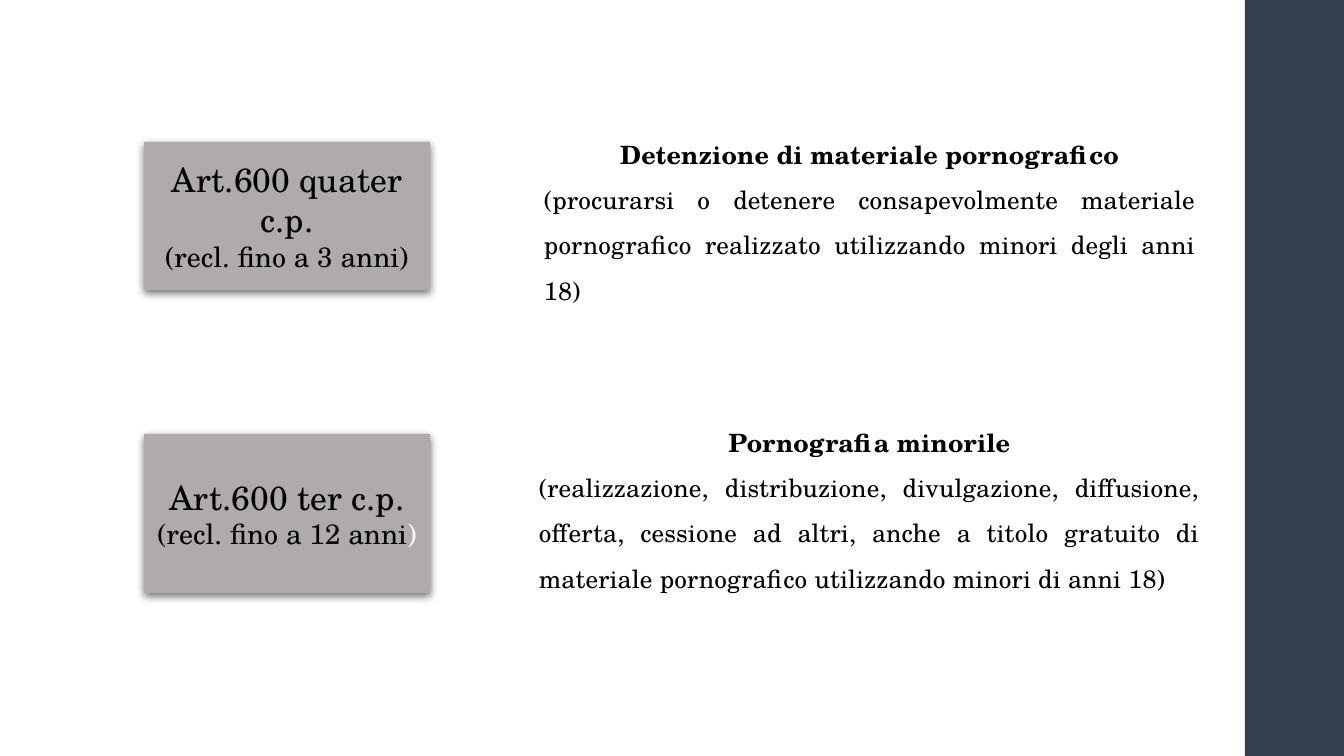
from lxml.etree import SubElement
from pptx import Presentation
from pptx.dml.color import RGBColor
from pptx.enum.shapes import MSO_SHAPE
from pptx.enum.text import MSO_ANCHOR, MSO_AUTO_SIZE, PP_ALIGN
from pptx.oxml.ns import qn
from pptx.util import Pt

EMU_PER_PX = 914400 / 100.8
FONT = "TeX Gyre Schola"
COLORS = {"sidebar": "333F50", "card": "AFABAB", "text": "000000",
          "light": "FFFFFF", "shadow": "000000"}

# Each article: card box, card lines, description box, heading, description
ARTICLES = [
    ((144, 142, 286, 148),
     "Art.600 quater c.p.", [("(recl. fino a 3 anni)", "text")],
     (534, 119, 672, 194),
     "Detenzione di materiale pornografico",
     "(procurarsi o detenere consapevolmente materiale pornografico "
     "realizzato utilizzando minori degli anni 18)"),
    ((144, 434, 286, 159),
     "Art.600 ter c.p.", [("(recl. fino a 12 anni", "text"), (")", "light")],
     (529, 407, 681, 194),
     "Pornografia minorile",
     "(realizzazione, distribuzione, divulgazione, diffusione, offerta, "
     "cessione ad altri, anche a titolo gratuito di materiale pornografico "
     "utilizzando minori di anni 18)"),
]


def px(length):
    return round(length * EMU_PER_PX)


def add_rectangle(page, box, color):
    shape = page.shapes.add_shape(MSO_SHAPE.RECTANGLE, *map(px, box))
    shape.shadow.inherit = False
    shape.fill.solid()
    shape.fill.fore_color.rgb = RGBColor.from_string(COLORS[color])
    shape.line.fill.background()
    return shape


def add_shadow(shape):
    effects = shape._element.spPr.find(qn("a:effectLst"))
    shadow = SubElement(effects, qn("a:outerShdw"), blurRad=str(Pt(6)),
                        dist=str(Pt(2)), dir="5400000", rotWithShape="0")
    color = SubElement(shadow, qn("a:srgbClr"), val=COLORS["shadow"])
    SubElement(color, qn("a:alpha"), val="55000")


def write(para, spans, size, bold=False, align=PP_ALIGN.CENTER,
          line_spacing=None, letter_spacing=None):
    para.alignment = align
    if line_spacing:
        para.line_spacing = line_spacing
    for text, color in spans:
        span = para.add_run()
        span.text = text
        span.font.name = FONT
        span.font.size = Pt(size)
        span.font.bold = bold
        span.font.color.rgb = RGBColor.from_string(COLORS[color])
        if letter_spacing:
            span.font._element.set("spc", str(round(letter_spacing * 100)))


def add_card(page, box, article, penalty):
    card = add_rectangle(page, box, "card")
    add_shadow(card)
    frame = card.text_frame
    frame.word_wrap = True
    frame.vertical_anchor = MSO_ANCHOR.MIDDLE
    write(frame.paragraphs[0], [(article, "text")], size=24)
    write(frame.add_paragraph(), penalty, size=20)


def add_description(page, box, heading, description):
    frame = page.shapes.add_textbox(*map(px, box)).text_frame
    frame.word_wrap = True
    frame.auto_size = MSO_AUTO_SIZE.SHAPE_TO_FIT_TEXT
    shared = {"size": 18, "line_spacing": 1.5, "letter_spacing": 0.1}
    write(frame.paragraphs[0], [(heading, "text")], bold=True, **shared)
    write(frame.add_paragraph(), [(description, "text")],
          align=PP_ALIGN.JUSTIFY, **shared)


def build_articles_slide(deck):
    page = deck.slides.add_slide(deck.slide_layouts[6])
    # Sidebar on the right edge
    add_rectangle(page, (1245, 0, 99, 756), "sidebar")
    # One row per article
    for card_box, article, penalty, text_box, heading, description in ARTICLES:
        add_card(page, card_box, article, penalty)
        add_description(page, text_box, heading, description)


def main():
    deck = Presentation()
    deck.slide_width, deck.slide_height = px(1344), px(756)
    build_articles_slide(deck)
    deck.save("out.pptx")


if __name__ == "__main__":
    main()
